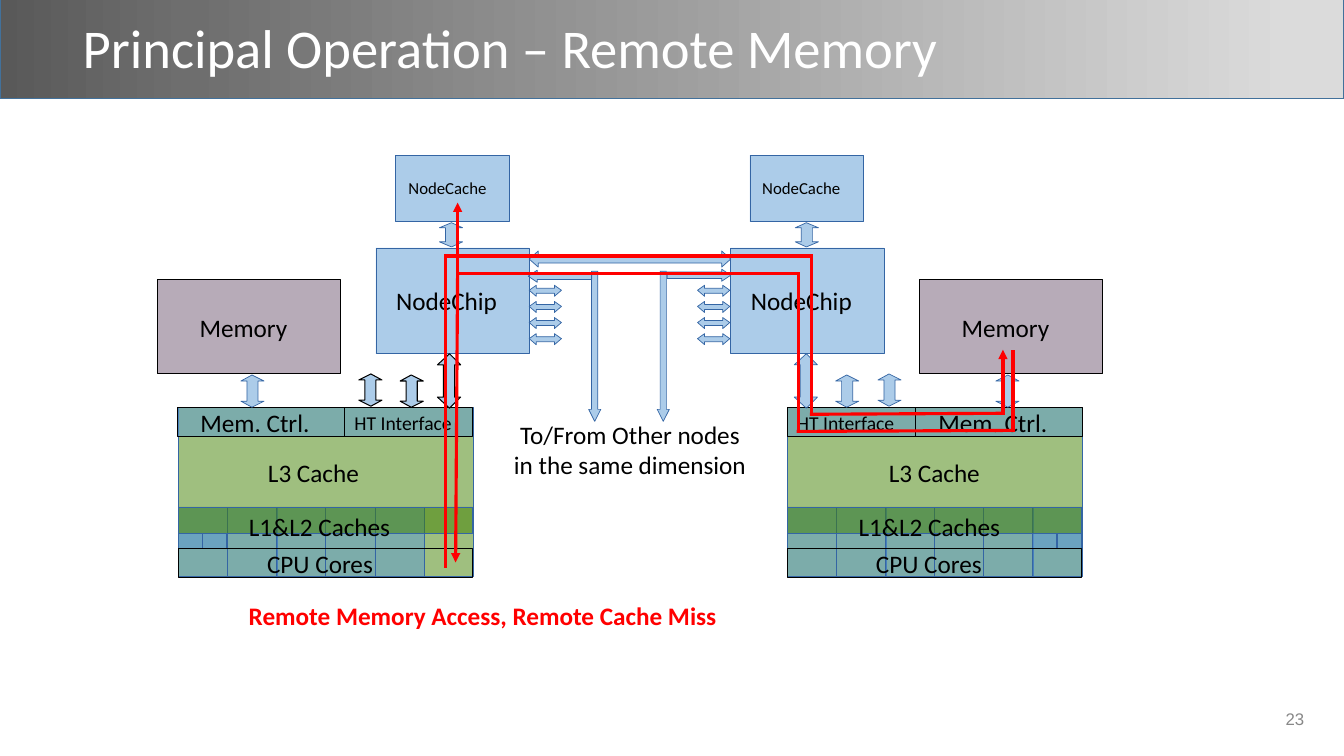
from copy import deepcopy
from itertools import pairwise

from pptx import Presentation
from pptx.dml.color import RGBColor
from pptx.enum.shapes import MSO_CONNECTOR, MSO_SHAPE as Shape
from pptx.enum.text import MSO_ANCHOR as Anchor, PP_ALIGN as Align
from pptx.oxml.ns import qn
from pptx.util import Emu, Pt

PX = 9144  # 100 px to the inch
SLIDE_W, SLIDE_H = 12192000, 6858000

BLACK = RGBColor(0x00, 0x00, 0x00)
WHITE = RGBColor(0xFF, 0xFF, 0xFF)
GREY = RGBColor(0x88, 0x88, 0x88)
RED = RGBColor(0xFF, 0x00, 0x00)
BLUE = RGBColor(0x5B, 0x9B, 0xD5)
GREEN = RGBColor(0x40, 0x80, 0x00)
PURPLE = RGBColor(0x71, 0x59, 0x73)
EDGE = RGBColor(0x34, 0x65, 0xA4)
BAR_EDGE = RGBColor(0x42, 0x71, 0x9B)
BAR_STOPS = [
    (0, RGBColor(0x59, 0x59, 0x59)),
    (0.14, RGBColor(0x6E, 0x6E, 0x6E)),
    (0.96, RGBColor(0xDB, 0xDB, 0xDB)),
]

TITLE = "Principal Operation – Remote Memory"
PAGE = "23"

# Parts of both nodes: (left node x, right node x), y, width, height, fill, edge
CHIP_PARTS = [
    ((156, 912), 277, 182, 94, PURPLE, BLACK),
    ((177, 781), 404, 293, 168, GREEN, EDGE),
    ((176, 908), 404, 166, 29, BLUE, BLACK),
    ((342, 781), 404, 127, 29, BLUE, BLACK),
    ((373, 725), 246, 152, 105, BLUE, EDGE),
    ((392, 744), 154, 113, 66, BLUE, EDGE),
]
CORE_PARTS = [
    ((177, 781), 503, 292, 26, GREEN, EDGE),
    ((177, 1024), 529, 24, 15, BLUE, EDGE),
    ((201, 1049), 529, 24, 15, BLUE, EDGE),
    ((177, 781), 544, 292, 29, None, BLACK),
]
CORES = [(177, 5), (781, 6)]  # x of the first core, number of cores
CORE_Y, CORE_W, CORE_H = 503, 49, 69
CORE_ROW_W, CORES_PER_ROW = 292, 6

# Labels: text, (left node x, right node x), y, width, height, size
LABELS = [
    ("Memory", (192, 948), 304, 99, 41, 18),
    ("L3 Cache", (260, 876), 448, 102, 41, 18),
    ("Mem. Ctrl.", (193, 925), 399, 120, 41, 18),
    ("HT Interface", (346, 785), 402, 108, 34, 14),
    ("CPU Cores", (259, 863), 538, 117, 41, 18),
    ("L1&L2 Caches", (241, 846), 502, 152, 41, 18),
    ("NodeChip", (384, 736), 278, 118, 41, 18),
    ("NodeCache", (397, 748), 172, 94, 29, 12),
]

# Vertical double arrows: (left node x, right node x), y, height, left node edge
LINKS = [
    ((239, 988), 372, 32, EDGE),
    ((356, 871), 371, 32, BLACK),
    ((397, 829), 372, 32, BLACK),
    ((434, 788), 351, 54, BLACK),
    ((436, 789), 221, 24, EDGE),
]
LINK_W = 23
PORT_XS, PORT_Y, PORT_COUNT, PORT_PITCH = (525, 692), 283, 4, 16
PORT_W, PORT_H, PORT_HEAD = 32, 11, 7
BRIDGE, BRIDGE_HEAD = (525, 249, 200, 16), 9

# Arrows from the chips to other nodes: shape, box, adjustments
BRANCHES = [
    (Shape.LEFT_ARROW, (524, 268, 63, 12), (0.54, 0.75)),
    (Shape.RIGHT_ARROW, (662, 267, 63, 12), (0.54, 0.75)),
    (Shape.DOWN_ARROW, (652, 269, 12, 149), (0.52, 0.99)),
    (Shape.DOWN_ARROW, (584, 269, 12, 149), (0.52, 0.99)),
]

OTHER_NODES = ["To/From Other nodes", "in the same dimension"]
CAPTION = ["Remote Memory Access, Remote Cache Miss"]

# Corner points of each red route, and whether it ends in an arrowhead
ROUTES = [
    ([(442, 562), (442, 254), (805, 254), (805, 411), (995, 410), (995, 347)], True),
    ([(1005, 349), (1005, 427), (792, 428), (792, 271), (454, 271)], False),
    ([(454, 271), (452, 558)], True),
    ([(454, 271), (454, 201)], True),
]


def px(*lengths):
    return [Emu(length * PX) for length in lengths]


def paint(part, fill, edge):
    """Give a shape a half-transparent fill, or none, and a thin edge."""
    part.shadow.inherit = False
    if fill is None:
        part.fill.background()
    else:
        part.fill.solid()
        part.fill.fore_color.rgb = fill
        colour = part._element.spPr.find(qn("a:solidFill"))[0]
        colour.append(colour.makeelement(qn("a:alpha"), {"val": "50000"}))
    part.line.color.rgb = edge
    part.line.width = Pt(0.75 if edge == BLACK else 0.5)


def add_box(slide, box, fill, edge):
    paint(slide.shapes.add_shape(Shape.RECTANGLE, *px(*box)), fill, edge)


def add_double_arrow(slide, box, head, edge, upright=False):
    """Outline an arrow with two heads; its stem is half as thick as the heads."""
    x, y, w, h = box
    length, breadth = (h, w) if upright else (w, h)
    near, far = breadth / 4, breadth * 3 / 4
    outline = [
        (0, breadth / 2), (head, 0), (head, near), (length - head, near),
        (length - head, 0), (length, breadth / 2), (length - head, breadth),
        (length - head, far), (head, far), (head, breadth),
    ]
    points = [(x + b, y + a) if upright else (x + a, y + b) for a, b in outline]
    builder = slide.shapes.build_freeform(*points[0], scale=PX)
    builder.add_line_segments(points[1:], close=True)
    paint(builder.convert_to_shape(), BLUE, edge)


def write(paragraph, text, size, colour, align, name="Calibri", bold=False):
    paragraph.alignment = align
    run = paragraph.add_run()
    run.text = text
    run.font.name = name
    run.font.size = Pt(size)
    run.font.bold = bold
    run.font.color.rgb = colour


def set_frame(frame, inset):
    frame.vertical_anchor = Anchor.MIDDLE
    frame.margin_left = frame.margin_right = Emu(inset * PX)
    frame.margin_top = frame.margin_bottom = Emu(inset * PX)


def add_label(slide, lines, box, size, colour=BLACK, bold=False):
    frame = slide.shapes.add_textbox(*px(*box)).text_frame
    frame.word_wrap = False
    set_frame(frame, 0)
    for index, line in enumerate(lines):
        paragraph = frame.add_paragraph() if index else frame.paragraphs[0]
        write(paragraph, line, size, colour, Align.CENTER, bold=bold)


def add_segment(slide, start, end, arrow):
    segment = slide.shapes.add_connector(MSO_CONNECTOR.STRAIGHT, *px(*start, *end))
    segment.line.color.rgb = RED
    segment.line.width = Pt(2.25)
    properties = segment._element.spPr
    outline = properties.find(qn("a:ln"))
    outline.set("cap", "sq")
    if arrow:
        outline.append(outline.makeelement(qn("a:tailEnd"), {"type": "triangle"}))
    properties.append(properties.makeelement(qn("a:effectLst"), {}))


def add_header(slide):
    bar = slide.shapes.add_shape(Shape.RECTANGLE, 0, *px(-5), SLIDE_W, *px(103))
    bar.shadow.inherit = False
    bar.fill.gradient()
    bar.fill.gradient_angle = 0
    stop_list = bar._element.spPr.find(qn("a:gradFill")).find(qn("a:gsLst"))
    stop_list.append(deepcopy(stop_list[0]))
    for stop, (position, colour) in zip(bar.fill.gradient_stops, BAR_STOPS):
        stop.position = position
        stop.color.rgb = colour
    bar.line.color.rgb = BAR_EDGE
    bar.line.width = Pt(1)
    slide.shapes._spTree.insert(2, bar._element)  # behind the title

    title = slide.shapes.title
    title.left, title.top, title.width, title.height = px(77, -8, 927, 116)
    set_frame(title.text_frame, 5)
    heading = title.text_frame.paragraphs[0]
    heading.line_spacing = 0.9
    write(heading, TITLE, 39, WHITE, Align.LEFT)

    page = slide.shapes.add_textbox(*px(999, 699, 300, 29)).text_frame
    page.word_wrap = True
    set_frame(page, 5)
    write(page.paragraphs[0], PAGE, 12, GREY, Align.RIGHT, name="Arial")


def add_node(slide, side):
    """Add one node; side is 0 for the left one and 1 for the right one."""
    for xs, y, w, h, fill, edge in CHIP_PARTS:
        add_box(slide, (xs[side], y, w, h), fill, edge)
    first_x, count = CORES[side]
    for core in range(count):
        x = first_x + round(core * CORE_ROW_W / CORES_PER_ROW)
        add_box(slide, (x, CORE_Y, CORE_W, CORE_H), BLUE, EDGE)
    for xs, y, w, h, fill, edge in CORE_PARTS:
        add_box(slide, (xs[side], y, w, h), fill, edge)
    for xs, y, h, left_edge in LINKS:
        edge = EDGE if side else left_edge
        add_double_arrow(slide, (xs[side], y, LINK_W, h), h / 5, edge, upright=True)
    for port in range(PORT_COUNT):
        box = (PORT_XS[side], PORT_Y + port * PORT_PITCH, PORT_W, PORT_H)
        add_double_arrow(slide, box, PORT_HEAD, EDGE)
    for text, xs, y, w, h, size in LABELS:
        add_label(slide, [text], (xs[side], y, w, h), size)


def main():
    deck = Presentation()
    deck.slide_width, deck.slide_height = SLIDE_W, SLIDE_H
    slide = deck.slides.add_slide(deck.slide_layouts[5])
    add_header(slide)
    for side in (0, 1):
        add_node(slide, side)
    add_double_arrow(slide, BRIDGE, BRIDGE_HEAD, EDGE)
    for kind, box, adjustments in BRANCHES:
        branch = slide.shapes.add_shape(kind, *px(*box))
        branch.adjustments[0], branch.adjustments[1] = adjustments
        paint(branch, BLUE, EDGE)
    add_label(slide, OTHER_NODES, (504, 410, 242, 71), 18)
    add_label(slide, CAPTION, (241, 590, 476, 41), 18, RED, bold=True)
    for corners, has_arrow in ROUTES:
        for start, end in pairwise(corners):
            add_segment(slide, start, end, has_arrow and end == corners[-1])
    deck.save("out.pptx")


if __name__ == "__main__":
    main()
